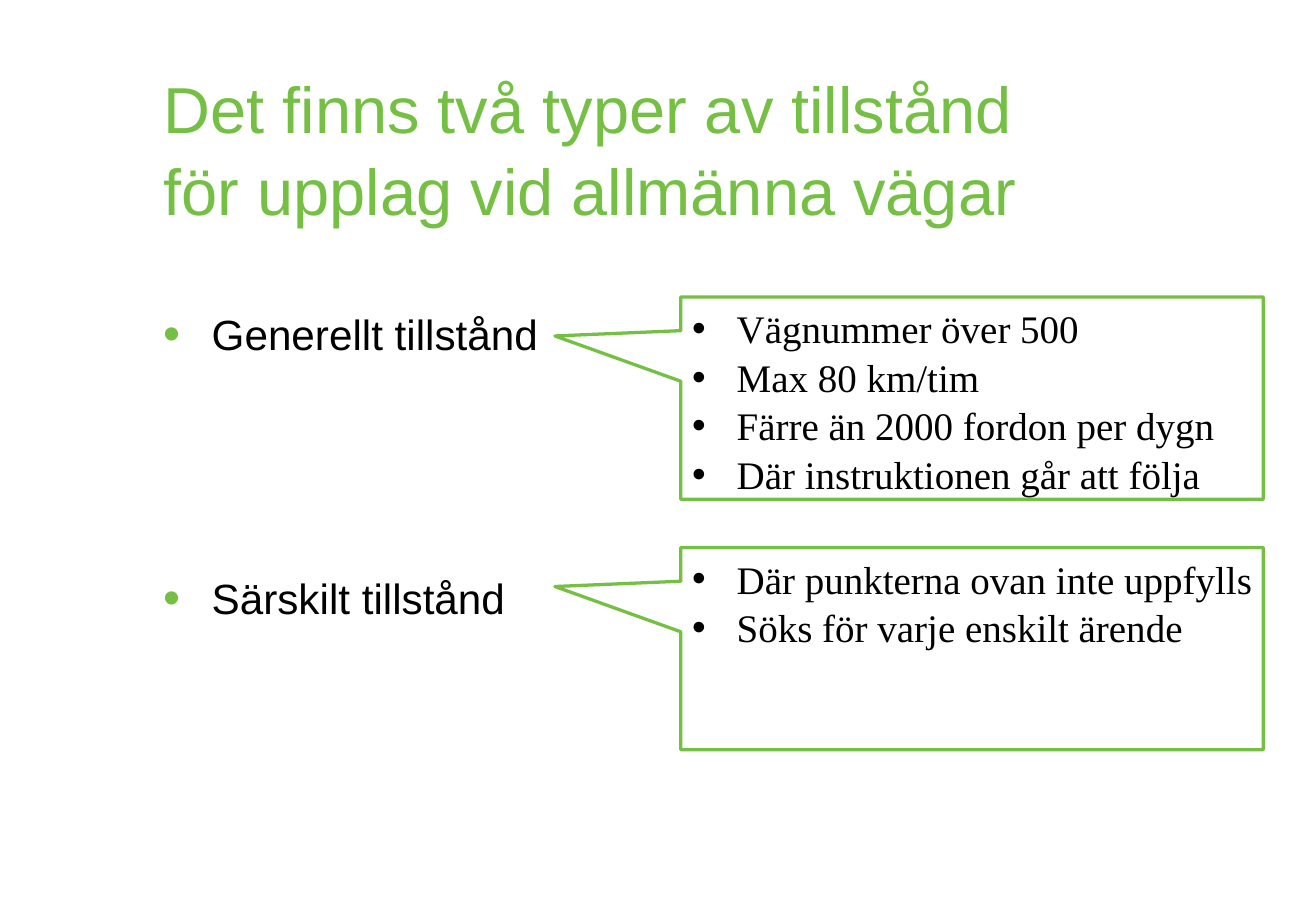
import pptx
import pptx.dml.color
import pptx.enum.shapes
import pptx.enum.text
import pptx.oxml.ns
import pptx.util
from lxml import etree

COLORS = {"green": "75C044", "black": "000000", "white": "FFFFFF"}
WIDTH = pptx.util.Inches(11.25)
HEIGHT = pptx.util.Inches(7.79)
COLUMN = WIDTH / 100
ROW = HEIGHT / 100
LINE_SPACING = 1.04
TITLE_LINES = ["Det finns två typer av tillstånd", "för upplag vid allmänna vägar"]
PERMITS = ["Generellt tillstånd", "Särskilt tillstånd"]
CONDITIONS = [
    ["Vägnummer över 500", "Max 80 km/tim", "Färre än 2000 fordon per dygn",
     "Där instruktionen går att följa"],
    ["Där punkterna ovan inte uppfylls", "Söks för varje enskilt ärende"],
]


def color(name):
    """Return the named colour."""
    return pptx.dml.color.RGBColor.from_string(COLORS[name])


def place(box):
    """Turn a box in columns and rows into lengths on the slide."""
    left, top, width, height = box
    return [round(length) for length in
            (left * COLUMN, top * ROW, width * COLUMN, height * ROW)]


def prepare_frame(frame, horizontal, vertical, right=None):
    """Wrap the text and set its margins in inches."""
    frame.word_wrap = True
    frame.margin_left = pptx.util.Inches(horizontal)
    frame.margin_right = pptx.util.Inches(horizontal if right is None else right)
    frame.margin_top = frame.margin_bottom = pptx.util.Inches(vertical)


def style_paragraph(paragraph, font, size, color_name):
    """Set the font and alignment of a paragraph."""
    paragraph.alignment = pptx.enum.text.PP_ALIGN.LEFT
    paragraph.line_spacing = LINE_SPACING
    paragraph.font.name = font
    paragraph.font.size = pptx.util.Pt(size)
    paragraph.font.color.rgb = color(color_name)


def add_bullet(paragraph, indent, color_name, percent):
    """Give a paragraph a hanging round bullet."""
    properties = paragraph._p.get_or_add_pPr()
    properties.set("marL", str(pptx.util.Inches(indent)))
    properties.set("indent", str(-pptx.util.Inches(indent)))
    name = pptx.oxml.ns.qn
    bullet_color = etree.SubElement(properties, name("a:buClr"))
    etree.SubElement(bullet_color, name("a:srgbClr"), val=COLORS[color_name])
    etree.SubElement(properties, name("a:buSzPct"), val=str(percent * 1000))
    etree.SubElement(properties, name("a:buFont"), typeface="Arial")
    etree.SubElement(properties, name("a:buChar"), char="•")


def fill_list(frame, items, font, size, indent, bullet_color, percent, gap=0):
    """Write a bulleted list with a gap in points between items."""
    for index, item in enumerate(items):
        paragraph = frame.add_paragraph() if index else frame.paragraphs[0]
        add_bullet(paragraph, indent, bullet_color, percent)
        style_paragraph(paragraph, font, size, "black")
        paragraph.space_before = pptx.util.Pt(gap if index else 0)
        paragraph.add_run().text = item


def add_title(slide, box):
    """Add the two-line heading."""
    frame = slide.shapes.add_textbox(*place(box)).text_frame
    prepare_frame(frame, 0.11, 0.06)
    frame.vertical_anchor = pptx.enum.text.MSO_ANCHOR.BOTTOM
    paragraph = frame.paragraphs[0]
    style_paragraph(paragraph, "Arial", 40, "green")
    for index, line in enumerate(TITLE_LINES):
        if index:
            paragraph.add_line_break()
        paragraph.add_run().text = line


def add_permits(slide, box):
    """Add the list of permit types."""
    frame = slide.shapes.add_textbox(*place(box)).text_frame
    prepare_frame(frame, 0.11, 0.06)
    fill_list(frame, PERMITS, "Arial", 26, 0.41, "green", 115, gap=130)


def add_callout(slide, box, items):
    """Add a callout listing the conditions of one permit type."""
    shape = slide.shapes.add_shape(
        pptx.enum.shapes.MSO_SHAPE.RECTANGULAR_CALLOUT, *place(box))
    shape.shadow.inherit = False
    shape.adjustments[0] = -0.716
    shape.adjustments[1] = -0.307
    shape.fill.solid()
    shape.fill.fore_color.rgb = color("white")
    shape.line.color.rgb = color("green")
    shape.line.width = pptx.util.Pt(2)
    prepare_frame(shape.text_frame, 0.1, 0.05, right=0)
    shape.text_frame.vertical_anchor = pptx.enum.text.MSO_ANCHOR.TOP
    fill_list(shape.text_frame, items, "Times New Roman", 24, 0.38, "black", 100)


def add_permit_slide(presentation):
    """Build the slide on the two permit types."""
    slide = presentation.slides.add_slide(presentation.slide_layouts[6])
    slide.background.fill.solid()
    slide.background.fill.fore_color.rgb = color("white")
    add_title(slide, (11.47, 7.06, 84, 18.74))
    add_permits(slide, (11.47, 32.86, 40, 35.43))
    for index, items in enumerate(CONDITIONS):
        add_callout(slide, (51.73, 32.6 + 27.5 * index, 44.27, 22.2), items)


def main():
    """Create and save the presentation."""
    presentation = pptx.Presentation()
    presentation.slide_width = WIDTH
    presentation.slide_height = HEIGHT
    add_permit_slide(presentation)
    presentation.save("out.pptx")


if __name__ == "__main__":
    main()
